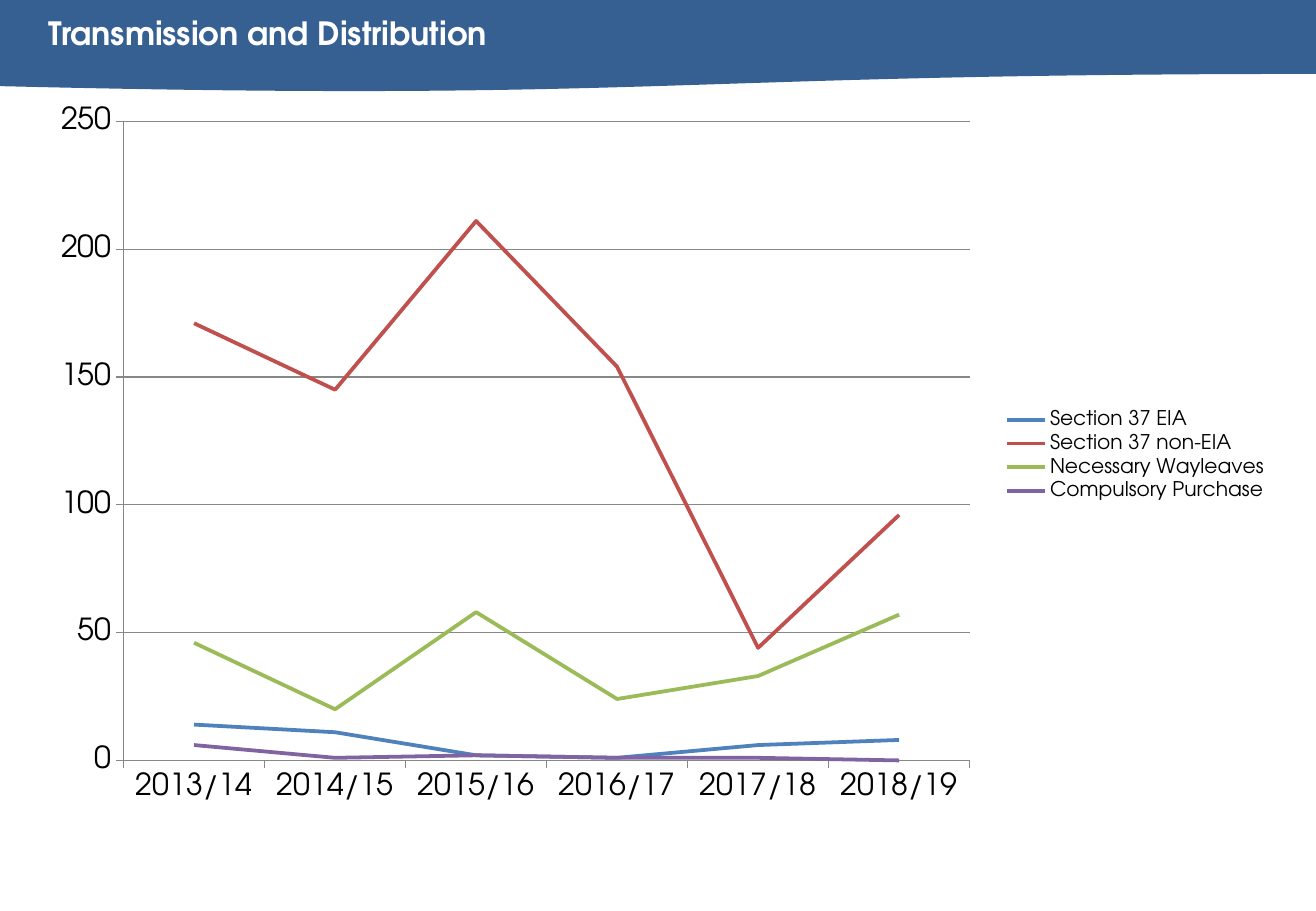
from lxml import etree
from pptx import Presentation
from pptx.chart.data import CategoryChartData
from pptx.dml.color import RGBColor
from pptx.enum.chart import XL_CHART_TYPE, XL_LEGEND_POSITION, XL_MARKER_STYLE, XL_TICK_MARK
from pptx.enum.shapes import MSO_SHAPE
from pptx.enum.text import MSO_ANCHOR
from pptx.oxml.ns import qn
from pptx.util import Inches, Pt

LINE_CHART = XL_CHART_TYPE.LINE
LEGEND_RIGHT = XL_LEGEND_POSITION.RIGHT
NO_MARKER = XL_MARKER_STYLE.NONE
TICK_OUT = XL_TICK_MARK.OUTSIDE
WAVE = MSO_SHAPE.FLOWCHART_DOCUMENT
MIDDLE = MSO_ANCHOR.MIDDLE

FONT = "TeX Gyre Adventor"
BANNER_BLUE = RGBColor(0x37, 0x60, 0x92)
WHITE = RGBColor(0xFF, 0xFF, 0xFF)
BLACK = RGBColor(0, 0, 0)
GREY = RGBColor(0x87, 0x87, 0x87)
BLUE = RGBColor(0x4F, 0x81, 0xBD)
RED = RGBColor(0xC0, 0x50, 0x4D)
GREEN = RGBColor(0x9B, 0xBB, 0x59)
PURPLE = RGBColor(0x80, 0x64, 0xA2)

TITLE = "Transmission and Distribution"
YEARS = ["2013/14", "2014/15", "2015/16", "2016/17", "2017/18", "2018/19"]
SERIES = [
    ("Section 37 EIA", [14, 11, 2, 1, 6, 8], BLUE),
    ("Section 37 non-EIA", [171, 145, 211, 154, 44, 96], RED),
    ("Necessary Wayleaves", [46, 20, 58, 24, 33, 57], GREEN),
    ("Compulsory Purchase", [6, 1, 2, 1, 1, 0], PURPLE),
]
PLOT_SHARES = {"x": 0.07, "y": 0.04, "w": 0.68, "h": 0.88}

WIDTH, HEIGHT = Inches(10.83), Inches(7.5)
MARGIN = Inches(0.3)
CONTENT_WIDTH = Inches(10.24)
BANNER_HEIGHT = Inches(0.76)
TITLE_HEIGHT = Inches(0.54)
CHART_HEIGHT = Inches(5.98)


def style_font(font, size, color, bold=False):
    font.name = FONT
    font.size = Pt(size)
    font.color.rgb = color
    font.bold = bold


def style_line(line, color, width):
    line.color.rgb = color
    line.width = Pt(width)


def add_banner(slide):
    banner = slide.shapes.add_shape(WAVE, 0, 0, WIDTH, BANNER_HEIGHT)
    banner.shadow.inherit = False
    banner.fill.solid()
    banner.fill.fore_color.rgb = BANNER_BLUE
    banner.line.fill.background()


def add_title(slide):
    box = slide.shapes.add_textbox(MARGIN, 0, CONTENT_WIDTH, TITLE_HEIGHT)
    frame = box.text_frame
    frame.word_wrap = True
    frame.vertical_anchor = MIDDLE
    frame.text = TITLE
    style_font(frame.paragraphs[0].runs[0].font, 19, WHITE, True)


def place_plot(chart):
    plot_area = chart._chartSpace.find(".//" + qn("c:plotArea"))
    for old in plot_area.findall(qn("c:layout")):
        plot_area.remove(old)
    layout = etree.Element(qn("c:layout"))
    plot_area.insert(0, layout)
    manual = etree.SubElement(layout, qn("c:manualLayout"))
    settings = {"layoutTarget": "inner", "xMode": "edge", "yMode": "edge", **PLOT_SHARES}
    for name, value in settings.items():
        etree.SubElement(manual, qn("c:" + name)).set("val", str(value))


def add_line_chart(slide):
    data = CategoryChartData()
    data.categories = YEARS
    for name, values, color in SERIES:
        data.add_series(name, values)
    chart = slide.shapes.add_chart(
        LINE_CHART, MARGIN, BANNER_HEIGHT, CONTENT_WIDTH, CHART_HEIGHT, data
    ).chart
    chart.has_title = False
    style_font(chart.font, 18, BLACK)
    chart.has_legend = True
    chart.legend.position = LEGEND_RIGHT
    chart.legend.include_in_layout = False
    style_font(chart.legend.font, 12, BLACK)
    chart.plots[0].vary_by_categories = False

    for series, (name, values, color) in zip(chart.plots[0].series, SERIES):
        series.smooth = False
        series.marker.style = NO_MARKER
        style_line(series.format.line, color, 2.25)

    for axis in (chart.category_axis, chart.value_axis):
        axis.major_tick_mark = TICK_OUT
        style_line(axis.format.line, GREY, 0.75)
    scale = chart.value_axis
    scale.minimum_scale, scale.maximum_scale, scale.major_unit = 0, 250, 50
    scale.has_major_gridlines = True
    style_line(scale.major_gridlines.format.line, GREY, 0.75)
    place_plot(chart)


def main():
    deck = Presentation()
    deck.slide_width, deck.slide_height = WIDTH, HEIGHT
    slide = deck.slides.add_slide(deck.slide_layouts[6])
    add_banner(slide)
    add_title(slide)
    add_line_chart(slide)
    deck.save("out.pptx")


if __name__ == "__main__":
    main()
